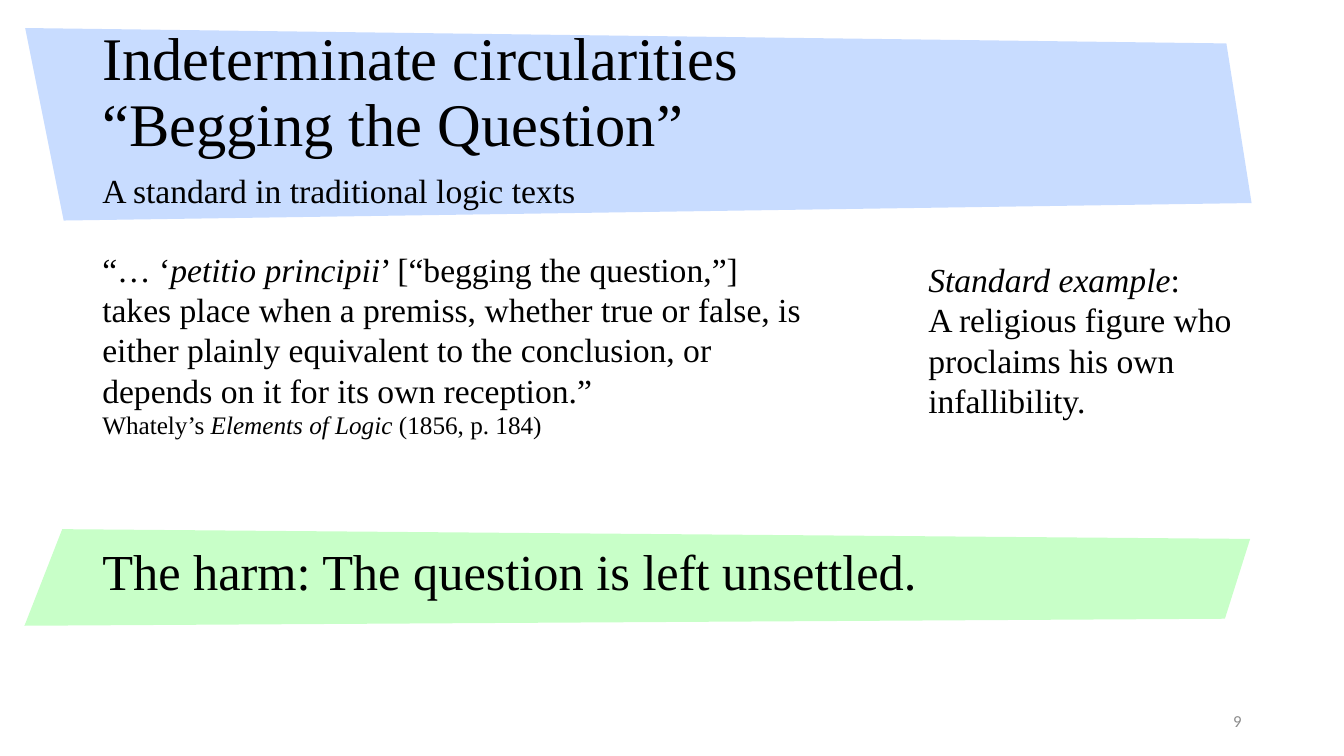
import dataclasses
import typing

import pptx
import pptx.dml.color
import pptx.enum.text
import pptx.util

Pt = pptx.util.Pt
RGBColor = pptx.dml.color.RGBColor
ANCHOR = pptx.enum.text.MSO_ANCHOR
ALIGN = pptx.enum.text.PP_ALIGN
AUTO_SIZE = pptx.enum.text.MSO_AUTO_SIZE

BLACK = RGBColor(0x00, 0x00, 0x00)
GRAY = RGBColor(0x8C, 0x8C, 0x8C)
BLUE = RGBColor(0xC8, 0xDC, 0xFF)
GREEN = RGBColor(0xC8, 0xFF, 0xC8)
SERIF = "Times New Roman"
SANS = "Calibri"
LEFT = 66  # shared left edge of the text column


@dataclasses.dataclass(frozen=True)
class Span:
    text: str
    italic: bool = False
    break_before: bool = False


@dataclasses.dataclass(frozen=True)
class Para:
    size: float
    spans: tuple[Span, ...]


@dataclasses.dataclass(frozen=True)
class TextBlock:
    left: float
    top: float
    width: float
    height: float
    paras: tuple[Para, ...]
    font: str = SERIF
    color: RGBColor = BLACK
    anchor: ANCHOR = ANCHOR.TOP
    align: ALIGN = ALIGN.LEFT
    line_spacing: float = 1.0
    wrap: bool = True
    grow: bool = True


@dataclasses.dataclass(frozen=True)
class Banner:
    corners: tuple[tuple[float, float], ...]
    color: RGBColor


def draw_banner(shapes: typing.Any, banner: Banner) -> None:
    first, *others = [(Pt(x), Pt(y)) for x, y in banner.corners]
    builder = shapes.build_freeform(*first)
    builder.add_line_segments(others, close=True)
    shape = builder.convert_to_shape()
    shape.shadow.inherit = False
    shape.fill.solid()
    shape.fill.fore_color.rgb = banner.color
    shape.line.fill.background()


def draw_text(shapes: typing.Any, block: TextBlock) -> None:
    box = shapes.add_textbox(Pt(block.left), Pt(block.top), Pt(block.width), Pt(block.height))
    frame = box.text_frame
    frame.word_wrap = block.wrap
    frame.auto_size = AUTO_SIZE.SHAPE_TO_FIT_TEXT if block.grow else AUTO_SIZE.NONE
    frame.vertical_anchor = block.anchor
    for index, para in enumerate(block.paras):
        paragraph = frame.add_paragraph() if index else frame.paragraphs[0]
        paragraph.alignment = block.align
        paragraph.line_spacing = block.line_spacing
        for span in para.spans:
            if span.break_before:
                paragraph.add_line_break()
            run = paragraph.add_run()
            run.text = span.text
            run.font.name = block.font
            run.font.size = Pt(para.size)
            run.font.italic = span.italic
            run.font.color.rgb = block.color


# Header and body content
HEADER_BANNER = Banner(((45.5, 157.5), (894, 145), (876, 31), (18, 20)), BLUE)

TITLE = TextBlock(
    LEFT, 29, 612, 76,
    (Para(43.2, (
        Span("Indeterminate circularities"),
        Span("“Begging the Question”", break_before=True),
    )),),
    anchor=ANCHOR.MIDDLE, line_spacing=0.9, grow=False,
)
PAGE_NUMBER = TextBlock(
    843, 500.5, 51, 28.5, (Para(12, (Span("9"),)),),
    font=SANS, color=GRAY, anchor=ANCHOR.MIDDLE, align=ALIGN.RIGHT, grow=False,
)
SUBTITLE = TextBlock(
    LEFT, 118, 355, 36,
    (Para(24, (Span("A standard in traditional logic texts"),)),),
    wrap=False,
)
QUOTATION = TextBlock(
    LEFT, 174, 520, 174,
    (
        Para(24, (
            Span("“… ‘"),
            Span("petitio principii", italic=True),
            Span("’ [“begging the question,”] takes place when a premiss, whether true "
                 "or false, is either plainly equivalent to the conclusion, or depends "
                 "on it for its own reception.”"),
        )),
        Para(18, (
            Span("Whately’s "),
            Span("Elements of Logic ", italic=True),
            Span("(1856, p. 184)"),
        )),
    ),
)
EXAMPLE = TextBlock(
    656, 181.5, 260, 124,
    (Para(24, (
        Span("Standard example", italic=True),
        Span(":"),
        Span("A religious figure who proclaims his own infallibility.", break_before=True),
    )),),
)

# Conclusion content
HARM_BANNER = Banner(((44.5, 378), (893, 385), (875, 442), (17.5, 447)), GREEN)
HARM = TextBlock(
    LEFT, 382.5, 627, 51,
    (Para(36, (Span("The harm: The question is left unsettled."),)),),
)


def main() -> None:
    deck = pptx.Presentation()
    deck.slide_width, deck.slide_height = Pt(960), Pt(540)
    page = deck.slides.add_slide(deck.slide_layouts[6])

    # Header and body
    draw_banner(page.shapes, HEADER_BANNER)
    for block in (TITLE, PAGE_NUMBER, SUBTITLE, QUOTATION, EXAMPLE):
        draw_text(page.shapes, block)

    # Conclusion, grouped with its banner
    conclusion = page.shapes.add_group_shape()
    draw_banner(conclusion.shapes, HARM_BANNER)
    draw_text(conclusion.shapes, HARM)

    deck.save("out.pptx")


if __name__ == "__main__":
    main()
